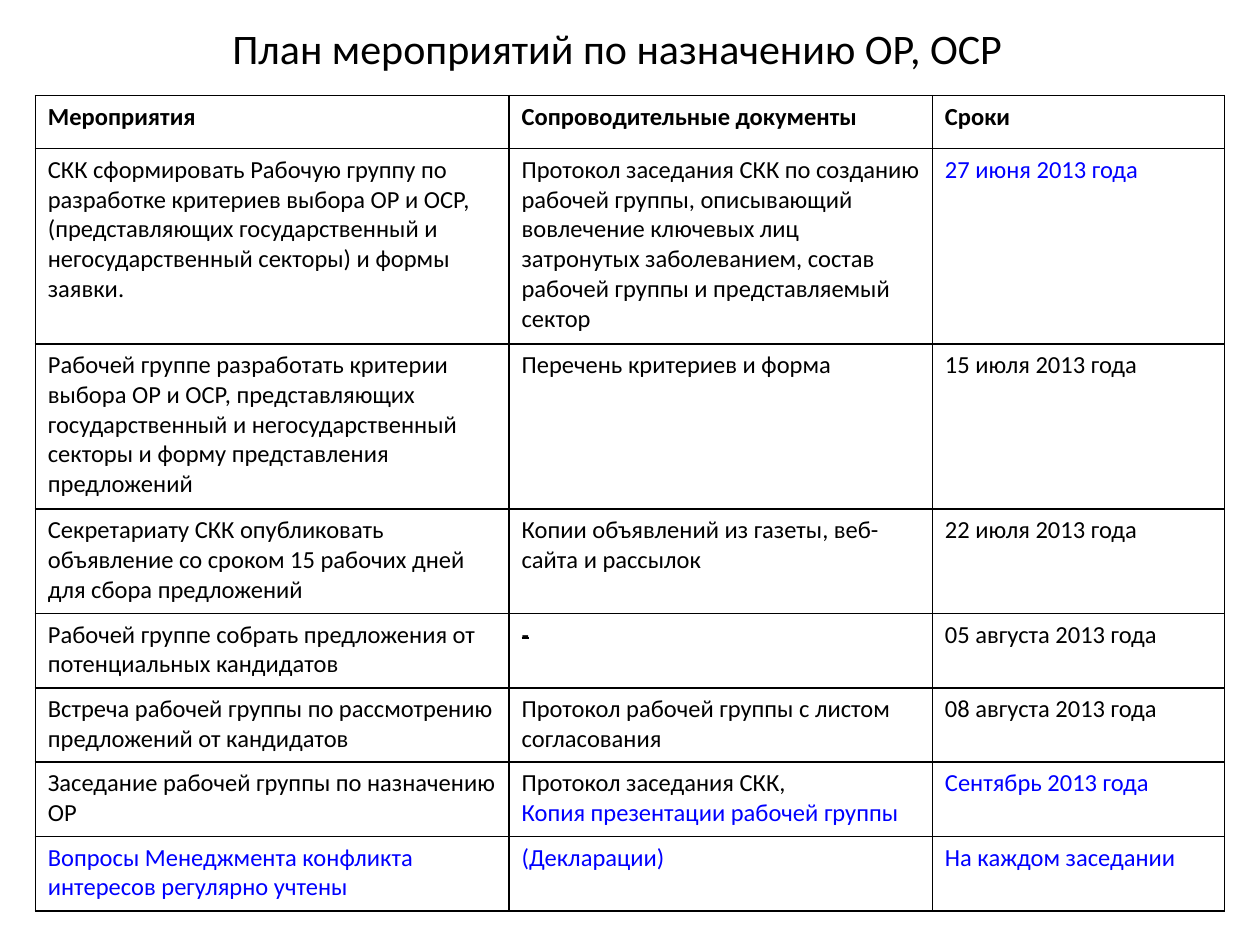
from lxml import etree
from pptx import Presentation
from pptx.dml.color import RGBColor
from pptx.enum import text as t
from pptx.oxml import ns
from pptx.util import Inches, Pt

BLACK = RGBColor(0, 0, 0)
BLUE = RGBColor(0, 0, 255)
FONT = "Calibri"

TITLE = "План мероприятий по назначению ОР, ОСР"
HEADS = ["Мероприятия", "Сопроводительные документы", "Сроки"]
PLAN = [
    ["СКК сформировать Рабочую группу по разработке критериев выбора ОР и ОСР, "
     "(представляющих государственный и негосударственный секторы) и формы заявки.",
     "Протокол заседания СКК по созданию рабочей группы, описывающий вовлечение "
     "ключевых лиц затронутых заболеванием, состав рабочей группы и представляемый сектор",
     "27 июня 2013 года"],
    ["Рабочей группе разработать критерии выбора ОР и ОСР, представляющих "
     "государственный и негосударственный секторы и форму представления предложений",
     "Перечень критериев и форма",
     "15 июля 2013 года"],
    ["Секретариату СКК опубликовать объявление со сроком 15 рабочих дней для сбора предложений",
     "Копии объявлений из газеты, веб-сайта и рассылок",
     "22 июля 2013 года"],
    ["Рабочей группе собрать предложения от потенциальных кандидатов",
     "-",
     "05 августа 2013 года"],
    ["Встреча рабочей группы по рассмотрению предложений от кандидатов",
     "Протокол рабочей группы с листом согласования",
     "08 августа 2013 года"],
    ["Заседание рабочей группы по назначению ОР",
     "Протокол заседания СКК,\nКопия презентации рабочей группы",
     "Сентябрь 2013 года"],
    ["Вопросы Менеджмента конфликта интересов регулярно учтены",
     "(Декларации)",
     "На каждом заседании"],
]
NEW = {
    "27 июня 2013 года",
    "Копия презентации рабочей группы",
    "Сентябрь 2013 года",
    *PLAN[-1],
}
STRUCK = {"-"}
COLS = [3.76, 3.36, 2.32]
ROWS = [0.42, 1.55, 1.31, 0.83] + [0.59] * 4


def add_run(para, words, size, color=BLACK, bold=False):
    run = para.add_run()
    run.text = words
    font = run.font
    font.name, font.size, font.bold = FONT, Pt(size), bold
    font.color.rgb = color
    return run


def add_edges(cell):
    props = cell._tc.get_or_add_tcPr()
    for i, side in enumerate("LRTB"):
        line = etree.Element(ns.qn(f"a:ln{side}"), w=str(Pt(1)))
        fill = etree.SubElement(line, ns.qn("a:solidFill"))
        etree.SubElement(fill, ns.qn("a:srgbClr"), val=str(BLACK))
        props.insert(i, line)


def fill_cell(cell, words, bold):
    cell.fill.background()
    add_edges(cell)
    frame = cell.text_frame
    for i, part in enumerate(words.split("\n")):
        para = frame.add_paragraph() if i else frame.paragraphs[0]
        run = add_run(para, part, 14, BLUE if part in NEW else BLACK, bold)
        if part in STRUCK:
            run.font._element.set("strike", "sngStrike")


def add_title(slide):
    title = slide.shapes.title
    title.left, title.top = Inches(0), Inches(0.15)
    title.width, title.height = Inches(9.8), Inches(0.45)
    frame = title.text_frame
    frame.word_wrap = True
    frame.vertical_anchor = t.MSO_ANCHOR.MIDDLE
    para = frame.paragraphs[0]
    para.alignment = t.PP_ALIGN.CENTER
    add_run(para, TITLE, 24)


def add_plan(slide):
    table = slide.shapes.add_table(
        len(ROWS), len(COLS), Inches(0.28), Inches(0.76),
        Inches(sum(COLS)), Inches(sum(ROWS))).table
    table.first_row = table.horz_banding = False
    for col, width in zip(table.columns, COLS):
        col.width = Inches(width)
    for row, high in zip(table.rows, ROWS):
        row.height = Inches(high)
    for r, line in enumerate([HEADS] + PLAN):
        for c, words in enumerate(line):
            fill_cell(table.cell(r, c), words, r == 0)


def main():
    deck = Presentation()
    deck.slide_width, deck.slide_height = Inches(10), Inches(7.5)
    slide = deck.slides.add_slide(deck.slide_layouts[5])
    add_title(slide)
    add_plan(slide)
    deck.save("out.pptx")


if __name__ == "__main__":
    main()
